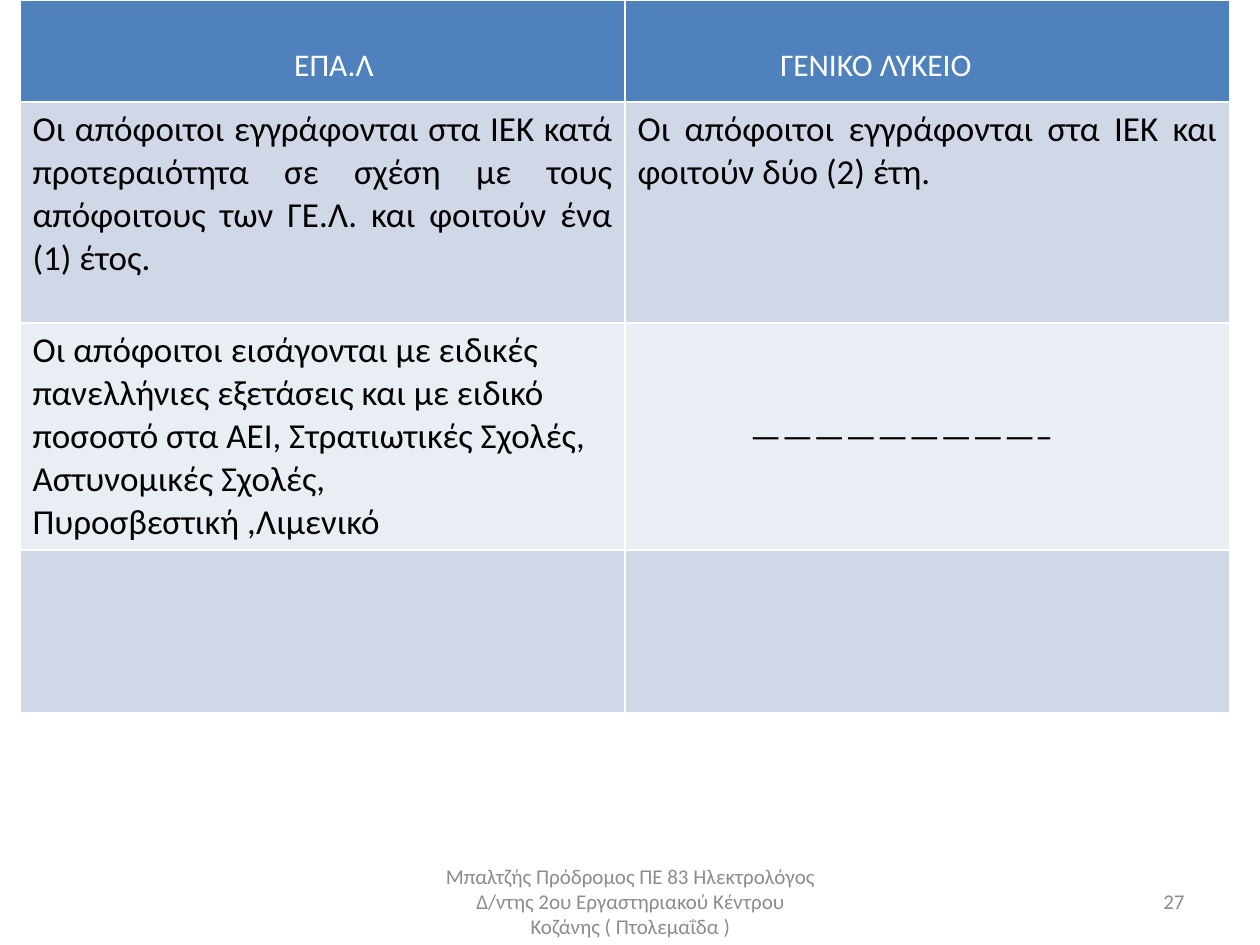
from pptx import Presentation
from pptx.dml.color import RGBColor as RGB
from pptx.enum.text import MSO_ANCHOR as ANCHOR, PP_ALIGN as ALIGN
from pptx.util import Emu, Pt

COLORS = {
    "header": "4F81BD",
    "band": "D0D8E8",
    "light": "E9EDF4",
    "ink": "000000",
    "white": "FFFFFF",
    "grey": "8C8C8C",
}


def px(n):
    return Emu(round(n * 914400 / 126))


class Deck:
    font = "Calibri"

    def __init__(self, width, height):
        self.prs = Presentation()
        self.prs.slide_width, self.prs.slide_height = px(width), px(height)
        self.s = self.prs.slides.add_slide(self.prs.slide_layouts[6])

    def fill_text(self, tf, text, size, color, align):
        p = tf.paragraphs[0]
        p.alignment = align
        r = p.add_run()
        r.text = text
        for name, value in {"name": self.font, "size": Pt(size), "bold": False}.items():
            setattr(r.font, name, value)
        r.font.color.rgb = RGB.from_string(COLORS[color])

    def text(self, box, text, size, color, align, anchor=ANCHOR.TOP):
        tf = self.s.shapes.add_textbox(*map(px, box)).text_frame
        for name, value in {"word_wrap": True, "vertical_anchor": anchor}.items():
            setattr(tf, name, value)
        self.fill_text(tf, text, size, color, align)

    def table(self, left, top, col_width, heights, fills, cells):
        cols = len(cells[0])
        box = left, top, col_width * cols, sum(heights)
        table = self.s.shapes.add_table(len(heights), cols, *map(px, box)).table
        for col in table.columns:
            col.width = px(col_width)
        for i, (height, fill) in enumerate(zip(heights, fills)):
            table.rows[i].height = px(height)
            for j, content in enumerate(cells[i]):
                cell = table.cell(i, j)
                cell.fill.solid()
                cell.fill.fore_color.rgb = RGB.from_string(COLORS[fill])
                if content:
                    text, align, formats = content
                    for name, value in formats.items():
                        setattr(cell, name, value)
                    self.fill_text(cell.text_frame, text, 20, "ink", align)


def main():
    deck = Deck(1260, 945)
    deck.table(
        20, 0, 605, [102, 221, 222, 163], ["header", "band", "light", "band"],
        [
            [None, None],
            [
                ("Οι απόφοιτοι εγγράφονται στα ΙΕΚ κατά προτεραιότητα σε σχέση με "
                 "τους απόφοιτους των ΓΕ.Λ. και φοιτούν ένα (1) έτος.", ALIGN.JUSTIFY, {}),
                ("Οι απόφοιτοι εγγράφονται στα ΙΕΚ και φοιτούν δύο (2) έτη.", ALIGN.JUSTIFY, {}),
            ],
            [
                ("Οι απόφοιτοι εισάγονται με ειδικές πανελλήνιες εξετάσεις και με "
                 "ειδικό ποσοστό στα ΑΕΙ, Στρατιωτικές Σχολές, Αστυνομικές Σχολές, "
                 "Πυροσβεστική ,Λιμενικό", ALIGN.LEFT, {}),
                ("—————————–", ALIGN.LEFT,
                 {"margin_left": px(125), "vertical_anchor": ANCHOR.MIDDLE}),
            ],
            [None, None],
        ],
    )
    for left, heading in [(147, "ΕΠΑ.Λ"), (689, "ΓΕΝΙΚΟ ΛΥΚΕΙΟ")]:
        deck.text((left, 39, 374, 50), heading, 18, "white", ALIGN.CENTER)
    deck.text((903, 876, 294, 50), "27", 12, "grey", ALIGN.RIGHT, ANCHOR.MIDDLE)
    deck.text(
        (431, 876, 399, 50),
        "Μπαλτζής Πρόδρομος ΠΕ 83 Ηλεκτρολόγος Δ/ντης 2ου Εργαστηριακού Κέντρου "
        "Κοζάνης ( Πτολεμαΐδα )",
        12, "grey", ALIGN.CENTER, ANCHOR.MIDDLE,
    )
    deck.prs.save("out.pptx")


if __name__ == "__main__":
    main()
